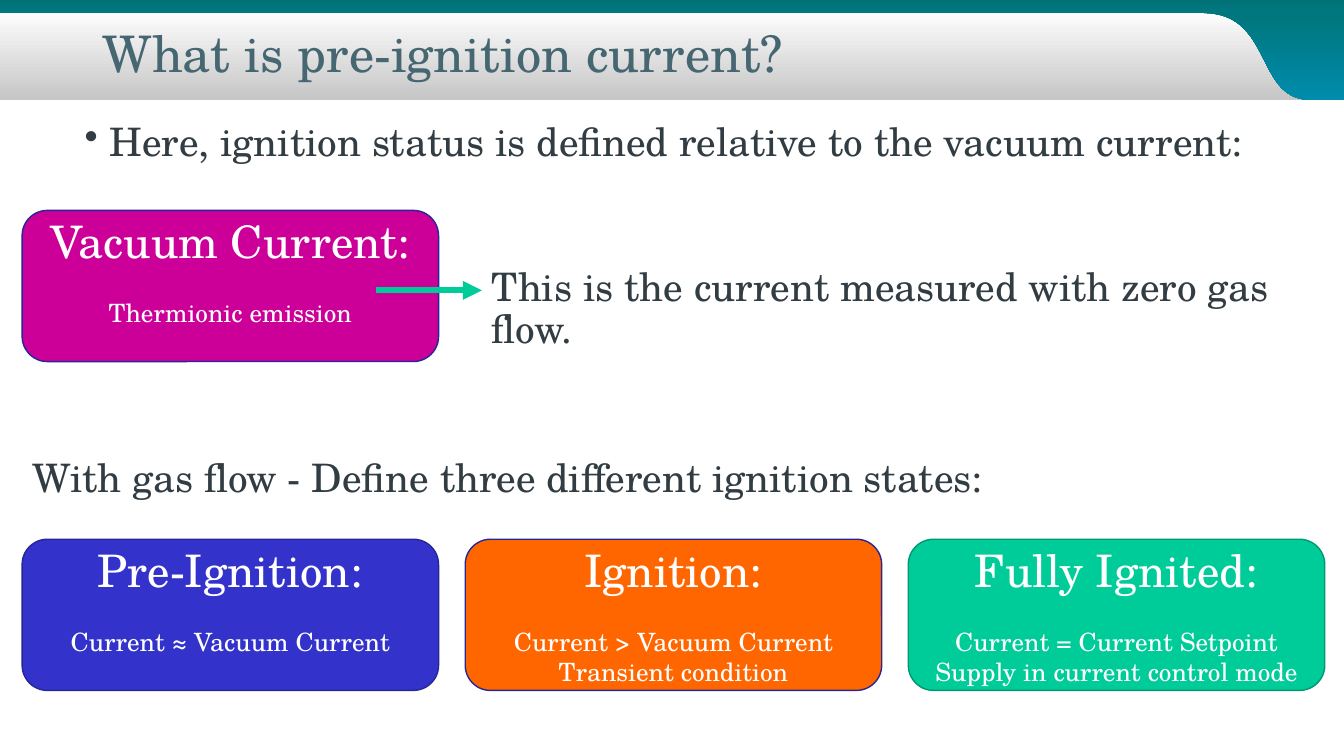
from lxml import etree
from pptx import Presentation
from pptx.dml.color import RGBColor
from pptx.enum.shapes import MSO_CONNECTOR, MSO_SHAPE
from pptx.enum.text import MSO_ANCHOR, MSO_AUTO_SIZE, PP_ALIGN
from pptx.oxml.ns import qn
from pptx.util import Pt

LEFT, CENTER = PP_ALIGN.LEFT, PP_ALIGN.CENTER
TOP, MIDDLE = MSO_ANCHOR.TOP, MSO_ANCHOR.MIDDLE
RECTANGLE, ROUNDED = MSO_SHAPE.RECTANGLE, MSO_SHAPE.ROUNDED_RECTANGLE
FONT = "TeX Gyre Schola"
COLORS = {
    "title": "466772", "text": "323D43", "white": "FFFFFF", "silver": "C6C6C6",
    "teal": "007275", "teal_mid": "007882", "teal_blue": "008CAC",
    "magenta": "CC0099", "blue": "3333CC", "orange": "FF6600", "green": "00CC99",
    "navy_edge": "262697", "green_edge": "009771",
}


def rgb(name):
    return RGBColor.from_string(COLORS[name])


def write(shape, lines, size=28, color="text", align=LEFT, anchor=TOP,
          before=10, spacing=0.9, bullet=None):
    """Fill a shape with lines, each a string or a (string, size, space before) tuple."""
    frame = shape.text_frame
    frame.word_wrap = True
    frame.auto_size = MSO_AUTO_SIZE.NONE
    frame.vertical_anchor = anchor
    for index, line in enumerate(lines):
        text, line_size, gap = (line, size, before) if isinstance(line, str) else line
        paragraph = frame.add_paragraph() if index else frame.paragraphs[0]
        paragraph.alignment = align
        paragraph.line_spacing = spacing
        paragraph.space_before = Pt(gap)
        indent = Pt(18) if bullet else 0
        properties = paragraph._p.get_or_add_pPr()
        properties.set("marL", str(indent))
        properties.set("indent", str(-indent))
        if bullet:
            etree.SubElement(properties, qn("a:buChar"), char=bullet)
        else:
            etree.SubElement(properties, qn("a:buNone"))
        run = paragraph.add_run()
        run.text = text
        run.font.name = FONT
        run.font.size = Pt(line_size)
        run.font.color.rgb = rgb(color)


presentation = Presentation()
presentation.slide_width, presentation.slide_height = Pt(960), Pt(540)
slide = presentation.slides.add_slide(presentation.slide_layouts[1])
shapes = slide.shapes

# Banner: silver band, teal curve, teal corner and teal top strip
band = shapes.add_shape(RECTANGLE, 0, Pt(6.5), Pt(960), Pt(64.8))

curve_points = [(859.7, 9.4), (909.4, 9.4), (896.4, 71.3), (936, 71.3)]
STEPS = 40
curve = []
for step in range(STEPS + 1):
    t = step / STEPS
    weights = [(1 - t) ** 3, 3 * t * (1 - t) ** 2, 3 * t * t * (1 - t), t ** 3]
    curve.append(tuple(Pt(sum(w * point[axis] for w, point in zip(weights, curve_points)))
                       for axis in (0, 1)))
builder = shapes.build_freeform(*curve[0])
builder.add_line_segments(curve[1:] + [(Pt(936), 0), (Pt(859.7), 0)], close=True)
swoop = builder.convert_to_shape()

corner = shapes.add_shape(RECTANGLE, Pt(933), 0, Pt(27), Pt(71.3))
strip = shapes.add_shape(RECTANGLE, 0, 0, Pt(960), Pt(9.4))

for part, start, end, angle in [
    (band, "silver", "white", 90),
    (swoop, "teal", "teal_blue", 270),
    (corner, "teal", "teal_blue", 270),
    (strip, "teal", "teal_mid", 270),
]:
    part.shadow.inherit = False
    part.line.fill.background()
    part.fill.gradient()
    part.fill.gradient_angle = angle
    for stop, color in zip(part.fill.gradient_stops, (start, end)):
        stop.color.rgb = rgb(color)

# Title and explanation, brought in front of the banner
title, explanation = shapes.title, slide.placeholders[1]
for holder, left, top, width, height in [
    (explanation, 344.2, 187.2, 608.4, 46.8),
    (title, 66.2, 9.4, 756.7, 61.9),
]:
    holder.left, holder.top, holder.width, holder.height = map(Pt, (left, top, width, height))
    holder.element.getparent().append(holder.element)
write(explanation, ["This is the current measured with zero gas flow."])
write(title, ["What is pre-ignition current?"], size=36, color="title", anchor=MIDDLE, before=0)

# Current cards
CARD_LEFT, CARD_STEP, DETAIL_LINE, DETAIL_ROWS = 15.8, 316.5, 21.4, 2
for column, top, fill, edge, heading, details in [
    (0, 385.2, "blue", "navy_edge", "Pre-Ignition:", ["Current ≈ Vacuum Current"]),
    (2, 385.2, "green", "green_edge", "Fully Ignited:",
     ["Current = Current Setpoint", "Supply in current control mode"]),
    (1, 385.2, "orange", "navy_edge", "Ignition:",
     ["Current > Vacuum Current", "Transient condition"]),
    (0, 150.3, "magenta", "navy_edge", "Vacuum Current:", ["Thermionic emission"]),
]:
    card = shapes.add_shape(ROUNDED, Pt(CARD_LEFT + column * CARD_STEP), Pt(top),
                            Pt(297.5), Pt(108))
    card.shadow.inherit = False
    card.fill.solid()
    card.fill.fore_color.rgb = rgb(fill)
    card.line.color.rgb = rgb(edge)
    card.line.width = Pt(1)
    card.text_frame.margin_bottom = Pt(3.6 + DETAIL_LINE * (DETAIL_ROWS - len(details)))
    write(card, [(heading, 32, 0), (details[0], 18, DETAIL_LINE)] + details[1:],
          size=18, color="white", align=CENTER, anchor=MIDDLE, before=0, spacing=1.0)

# Statements
for text, left, top, width, bullet in [
    ("Here, ignition status is defined relative to the vacuum current:", 53.3, 84.2, 893.5, "•"),
    ("With gas flow - Define three different ignition states:", 15.8, 324, 807.1, None),
]:
    statement = shapes.add_textbox(Pt(left), Pt(top), Pt(width), Pt(46.8))
    write(statement, [text], bullet=bullet)

# Arrow from the vacuum current to its explanation
arrow = shapes.add_connector(MSO_CONNECTOR.STRAIGHT, Pt(268.6), Pt(207.4), Pt(344.2), Pt(207.4))
arrow.line.color.rgb = rgb("green")
arrow.line.width = Pt(4.5)
etree.SubElement(arrow.line._get_or_add_ln(), qn("a:tailEnd"), type="triangle")
etree.SubElement(arrow.element.spPr, qn("a:effectLst"))

presentation.save("out.pptx")
